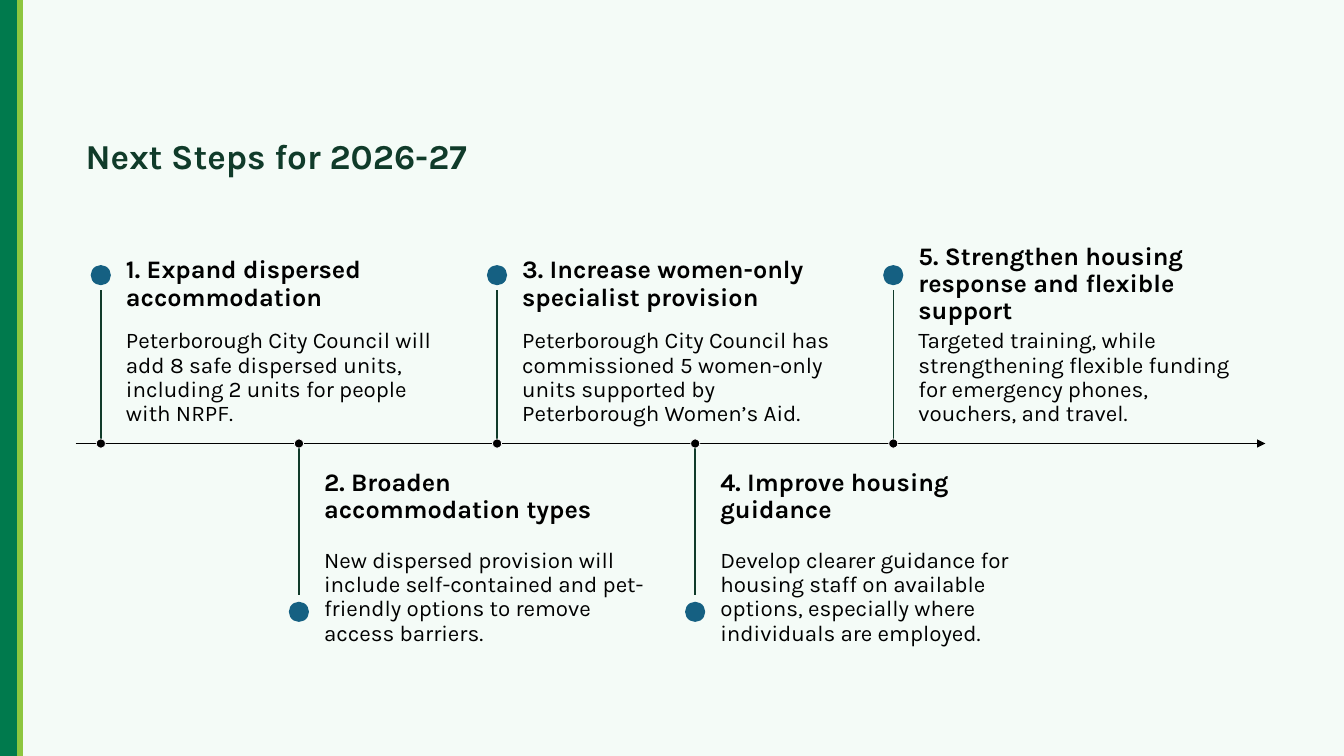
import pptx
import pptx.util
import pptx.dml.color
import pptx.enum.shapes
import pptx.enum.text
import pptx.oxml
import pptx.oxml.ns

Inches, Pt = pptx.util.Inches, pptx.util.Pt
Shape = pptx.enum.shapes.MSO_SHAPE
Anchor = pptx.enum.text.MSO_ANCHOR

HUES = {"back": "F4FBF7", "green": "007A4D", "lime": "8DC63F", "dark": "103B2A",
        "blue": "156082", "black": "000000", "white": "FFFFFF"}

STEPS = [
    ("1. Expand dispersed accommodation",
     "Peterborough City Council will add 8 safe dispersed units, "
     "including 2 units for people with NRPF."),
    ("2. Broaden accommodation types",
     "New dispersed provision will include self-contained and "
     "pet-friendly options to remove access barriers."),
    ("3. Increase women-only specialist provision",
     "Peterborough City Council has commissioned 5 women-only units "
     "supported by Peterborough Women’s Aid."),
    ("4. Improve housing guidance",
     "Develop clearer guidance for housing staff on available options, "
     "especially where individuals are employed."),
    ("5. Strengthen housing response and flexible support",
     "Targeted training, while strengthening flexible funding for "
     "emergency phones, vouchers, and travel."),
]
AXIS = 4.4
FIRST = 1
STRIDE = 7.86 / 4


class Deck:
    """Holds the style and the current slide, and draws each kind of element."""

    def __init__(self, font):
        self.font = font
        self.prs = pptx.Presentation()
        self.prs.slide_width = Inches(13.33)
        self.prs.slide_height = Inches(7.5)
        self.slide = self.prs.slides.add_slide(self.prs.slide_layouts[5])
        fill = self.slide.background.fill
        fill.solid()
        fill.fore_color.rgb = self.hue("back")

    def hue(self, name):
        return pptx.dml.color.RGBColor.from_string(HUES[name])

    def style(self, frame, text, size, color, bold, anchor, pads):
        frame.word_wrap = True
        frame.auto_size = pptx.enum.text.MSO_AUTO_SIZE.NONE
        frame.vertical_anchor = anchor
        (frame.margin_left, frame.margin_top,
         frame.margin_right, frame.margin_bottom) = map(Inches, pads)
        frame.text = text
        para = frame.paragraphs[0]
        para.alignment = pptx.enum.text.PP_ALIGN.LEFT
        para.line_spacing = 0.9
        para.space_before = Pt(0)
        font = para.runs[0].font
        font.name, font.size, font.bold = self.font, Pt(size), bold
        font.color.rgb = self.hue(color)

    def title(self, text, box):
        shape = self.slide.shapes.title
        shape.left, shape.top, shape.width, shape.height = map(Inches, box)
        self.style(shape.text_frame, text, 25, "dark", True, Anchor.BOTTOM,
                   (0.1, 0.05, 0.1, 0.05))

    def text(self, text, box, size, pads, bold=False, anchor=Anchor.TOP):
        shape = self.slide.shapes.add_textbox(*map(Inches, box))
        self.style(shape.text_frame, text, size, "black", bold, anchor, pads)

    def shape(self, kind, box, fill, line=None, width=1):
        shape = self.slide.shapes.add_shape(kind, *map(Inches, box))
        shape.shadow.inherit = False
        shape.fill.solid()
        shape.fill.fore_color.rgb = self.hue(fill)
        if line:
            shape.line.color.rgb = self.hue(line)
            shape.line.width = Pt(width)
        else:
            shape.line.fill.background()

    def dot(self, x, y, size, fill, line=None, width=1):
        box = (x - size / 2, y - size / 2, size, size)
        self.shape(Shape.OVAL, box, fill, line, width)

    def line(self, start, end, color, arrow=False):
        link = self.slide.shapes.add_connector(
            pptx.enum.shapes.MSO_CONNECTOR.STRAIGHT, *map(Inches, start + end))
        link.line.color.rgb = self.hue(color)
        link.line.width = Pt(1)
        props = link.element.spPr
        if arrow:
            head = pptx.oxml.parse_xml(
                "<a:tailEnd %s type='triangle'/>" % pptx.oxml.ns.nsdecls("a"))
            props.find(pptx.oxml.ns.qn("a:ln")).append(head)
        props.append(pptx.oxml.parse_xml(
            "<a:effectLst %s/>" % pptx.oxml.ns.nsdecls("a")))

    def step(self, x, head, body, above):
        left, wide = x + 0.25, 3.27
        if above:
            ball, stem, top, low, tall = 2.73, 2.88, 2.48, 3.16, 1.24
            pads = (0, 0.11, 0.11, 0.17)
        else:
            ball, stem, top, low, tall = 6.07, 5.9, 4.59, 5.28, 1.04
            pads = (0, 0.17, 0, 0.11)
        self.dot(x, ball, 0.2, "blue")
        self.text(body, (left, low, wide, tall), 16, pads)
        self.text(head, (left, top, wide, 0.68), 18, (0, 0, 0.12, 0),
                  True, Anchor.MIDDLE)
        self.line((x, min(stem, AXIS)), (x, max(stem, AXIS)), "dark")
        self.dot(x, AXIS, 0.09, "black", "white", 0.5)


def main():
    deck = Deck("Karla")
    deck.shape(Shape.RECTANGLE, (0, 0, 0.18, 7.5), "green", "green")
    deck.shape(Shape.RECTANGLE, (0.18, 0, 0.04, 7.5), "lime", "lime")
    deck.title("Next Steps for 2026-27", (0.75, 0.75, 11.8, 1.06))
    deck.line((0.75, AXIS), (12.55, AXIS), "black", arrow=True)
    for i, (head, body) in enumerate(STEPS):
        deck.step(FIRST + i * STRIDE, head, body, i % 2 == 0)
    deck.prs.save("out.pptx")


if __name__ == "__main__":
    main()
